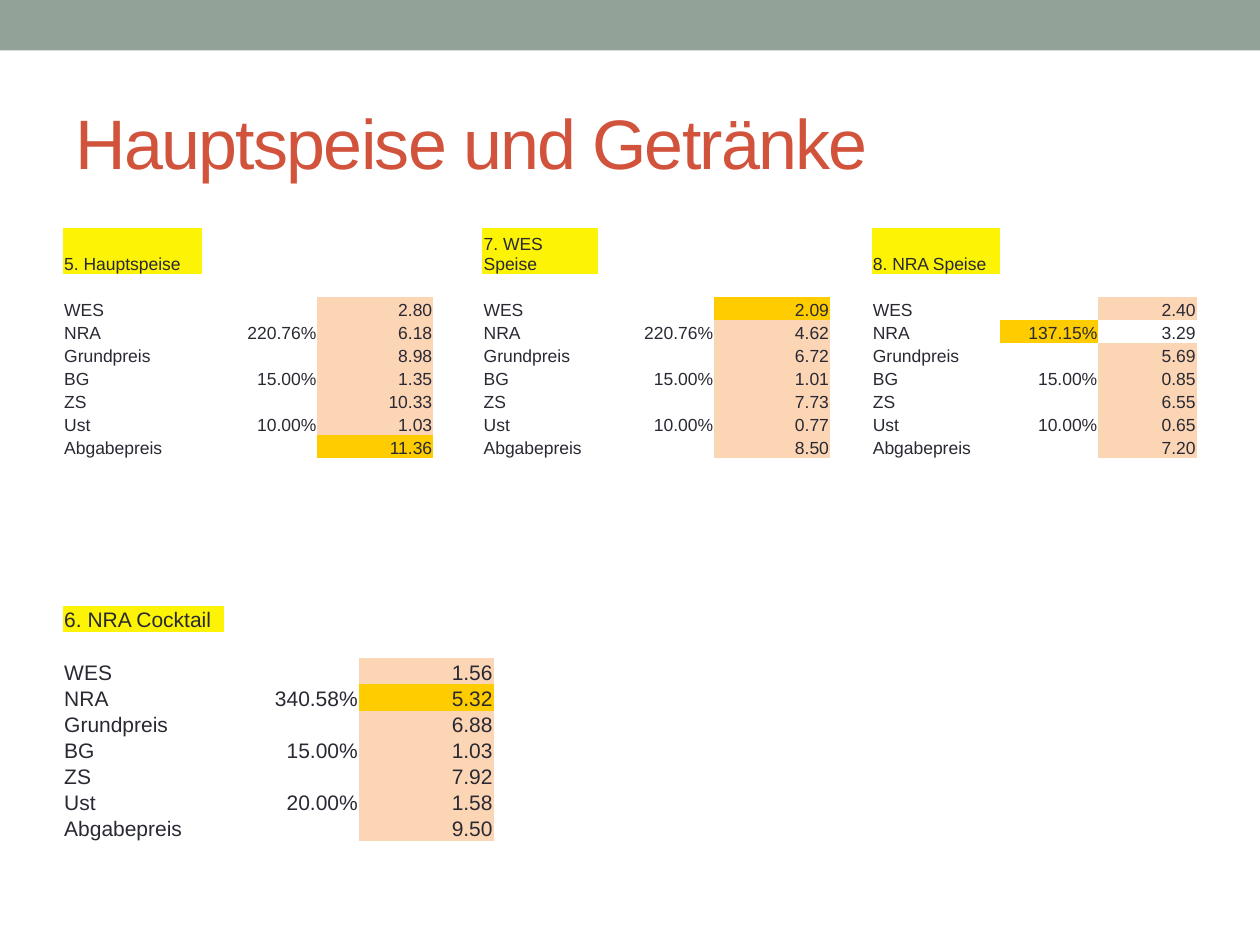
from dataclasses import dataclass

from pptx import Presentation
from pptx import util as u
from pptx.dml.color import RGBColor
from pptx.enum import shapes, text

SLIDE_W, SLIDE_H = u.Inches(10), u.Inches(7.5)
LEFT = 0.05  # margin as a share of the slide's width
FONT = "Arial"
SAGE = RGBColor(0x93, 0xA2, 0x99)
BRICK = RGBColor(0xD2, 0x53, 0x3C)
INK = RGBColor(0x29, 0x29, 0x34)
YELLOW = RGBColor(0xFC, 0xF3, 0x05)
PEACH = RGBColor(0xFC, 0xD5, 0xB4)
AMBER = RGBColor(0xFF, 0xCC, 0x00)
PLAIN_STYLE = "{2D5ABB26-0587-4C30-8999-92F81FD0307C}"

STEPS = ["WES", "NRA", "Grundpreis", "BG", "ZS", "Ust", "Abgabepreis"]
FIRST_STEP_ROW = 2  # below the heading and an empty row
ROW_COUNT = FIRST_STEP_ROW + len(STEPS)
BLOCK_STRIDE = 4  # label, rate, amount and a gap column


@dataclass
class Calculation:
    heading: str
    rates: dict[str, str]
    amounts: list[str]
    result: str  # step whose value is worked out
    rate_is_result: bool = False


@dataclass
class Sheet:
    top: float  # inches
    columns: list[float]  # inches
    heading_rows: int  # height of the heading, in rows
    row_height: float  # inches
    size: int
    calculations: list[Calculation]


def rates(nra: str, ust: str) -> dict[str, str]:
    return {"NRA": nra, "BG": "15.00%", "Ust": ust}


SHEETS = [
    Sheet(1.81, [1.1, 0.92, 0.92, 0.39, 0.92, 0.92, 0.92, 0.33, 1.02, 0.78, 0.78],
          2, 1.83 / 10, 10, [
        Calculation("5. Hauptspeise", rates("220.76%", "10.00%"),
                    ["2.80", "6.18", "8.98", "1.35", "10.33", "1.03", "11.36"],
                    "Abgabepreis"),
        Calculation("7. WES Speise", rates("220.76%", "10.00%"),
                    ["2.09", "4.62", "6.72", "1.01", "7.73", "0.77", "8.50"], "WES"),
        Calculation("8. NRA Speise", rates("137.15%", "10.00%"),
                    ["2.40", "3.29", "5.69", "0.85", "6.55", "0.65", "7.20"],
                    "NRA", rate_is_result=True),
    ]),
    Sheet(4.81, [1.28, 1.07, 1.07], 1, 1.87 / 9, 12, [
        Calculation("6. NRA Cocktail", rates("340.58%", "20.00%"),
                    ["1.56", "5.32", "6.88", "1.03", "7.92", "1.58", "9.50"], "NRA"),
    ]),
]


def write(cell, words: str, fill: RGBColor | None = None, right: bool = False) -> None:
    cell.text = words
    if right:
        cell.text_frame.paragraphs[0].alignment = text.PP_ALIGN.RIGHT
    if fill is not None:
        cell.fill.solid()
        cell.fill.fore_color.rgb = fill


def format_cell(cell, size: int) -> None:
    """Style a cell once its text is in place."""
    cell.margin_left = cell.margin_right = cell.margin_top = u.Inches(0.01)
    cell.margin_bottom = 0
    cell.vertical_anchor = text.MSO_ANCHOR.BOTTOM
    paragraph = cell.text_frame.paragraphs[0]
    for font in [paragraph.font] + [run.font for run in paragraph.runs]:
        font.name = FONT
        font.size = u.Pt(size)
        font.color.rgb = INK
    # Keeps empty cells from stretching their row
    paragraph._p.get_or_add_endParaRPr().set("sz", str(size * 100))


def fill_calculation(table, column: int, calculation: Calculation) -> None:
    write(table.cell(0, column), calculation.heading, YELLOW)
    for row, (step, amount) in enumerate(zip(STEPS, calculation.amounts), FIRST_STEP_ROW):
        is_result = step == calculation.result
        rate_fill, amount_fill = None, AMBER if is_result else PEACH
        if is_result and calculation.rate_is_result:
            rate_fill, amount_fill = AMBER, None
        write(table.cell(row, column), step)
        if step in calculation.rates:
            write(table.cell(row, column + 1), calculation.rates[step], rate_fill, right=True)
        write(table.cell(row, column + 2), amount, amount_fill, right=True)


def add_sheet(slide, sheet: Sheet) -> None:
    heights = [sheet.heading_rows * sheet.row_height] + [sheet.row_height] * (ROW_COUNT - 1)
    frame = slide.shapes.add_table(
        ROW_COUNT, len(sheet.columns), int(SLIDE_W * LEFT), u.Inches(sheet.top),
        u.Inches(sum(sheet.columns)), u.Inches(sum(heights)))
    table = frame.table
    table.first_row = table.horz_banding = False
    table._tbl.tblPr.find("{*}tableStyleId").text = PLAIN_STYLE
    for column, width in zip(table.columns, sheet.columns):
        column.width = u.Inches(width)
    for row, height in zip(table.rows, heights):
        row.height = u.Inches(height)
    for index, calculation in enumerate(sheet.calculations):
        fill_calculation(table, index * BLOCK_STRIDE, calculation)
    for cell in table.iter_cells():
        format_cell(cell, sheet.size)


def add_band(slide) -> None:
    band = slide.shapes.add_shape(shapes.MSO_SHAPE.RECTANGLE, 0, 0, SLIDE_W, u.Inches(0.4))
    band.shadow.inherit = False
    band.fill.solid()
    band.fill.fore_color.rgb = SAGE
    band.line.fill.background()


def set_title(slide, words: str) -> None:
    title = slide.shapes.title
    title.left, title.top = int(SLIDE_W * LEFT), u.Inches(0.58)
    title.width, title.height = int(SLIDE_W * (1 - 2 * LEFT)), u.Inches(1.08)
    title.text_frame.text = words
    title.text_frame.vertical_anchor = text.MSO_ANCHOR.MIDDLE
    paragraph = title.text_frame.paragraphs[0]
    paragraph.alignment = text.PP_ALIGN.LEFT
    paragraph.font.name = FONT
    paragraph.font.size = u.Pt(40)
    paragraph.font.color.rgb = BRICK
    paragraph.runs[0]._r.get_or_add_rPr().set("spc", "-100")


def main() -> None:
    deck = Presentation()
    deck.slide_width, deck.slide_height = SLIDE_W, SLIDE_H
    slide = deck.slides.add_slide(deck.slide_layouts.get_by_name("Title Only"))
    add_band(slide)
    set_title(slide, "Hauptspeise und Getränke")
    for sheet in SHEETS:
        add_sheet(slide, sheet)
    deck.save("out.pptx")


if __name__ == "__main__":
    main()
